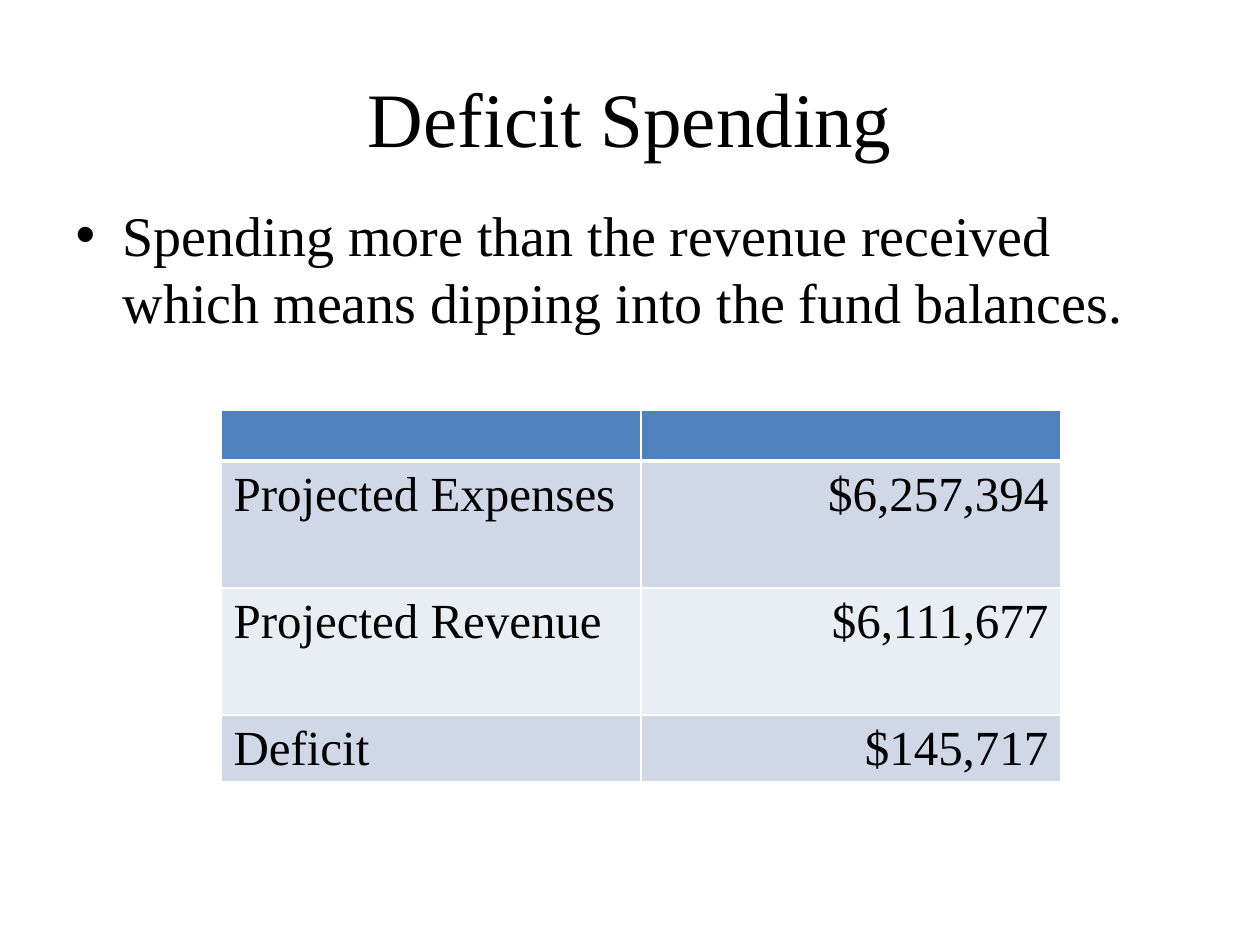
from pptx import Presentation
from pptx.dml.color import RGBColor
from pptx.enum.text import MSO_ANCHOR as ANCHOR, PP_ALIGN as ALIGN
from pptx.oxml.ns import qn
from pptx.util import Emu, Pt
from lxml.etree import SubElement

EMU_PER_PX = 914400 / 126
COLORS = {"text": "000000", "header": "4F81BD", "odd": "D0D8E8",
          "even": "E9EDF4", "border": "FFFFFF"}


def px(n):
    return Emu(round(n * EMU_PER_PX))


class SlideBuilder:
    font = "Times New Roman"

    def __init__(self, prs):
        self.slide = prs.slides.add_slide(prs.slide_layouts[1])

    def add_text(self, p, text, size, align):
        p.alignment = align
        r = p.add_run()
        r.text = text
        r.font.name = self.font
        r.font.size = Pt(size)
        r.font.color.rgb = RGBColor.from_string(COLORS["text"])

    def place(self, sp, x, y, w, h, anchor):
        sp.left, sp.top, sp.width, sp.height = map(px, (x, y, w, h))
        sp.text_frame.word_wrap = True
        sp.text_frame.vertical_anchor = anchor
        return sp.text_frame.paragraphs[0]

    def title(self, text, *box):
        p = self.place(self.slide.shapes.title, *box, ANCHOR.MIDDLE)
        self.add_text(p, text, 44, ALIGN.CENTER)

    def bullet(self, text, *box):
        p = self.place(self.slide.placeholders[1], *box, ANCHOR.TOP)
        self.add_text(p, text, 32, ALIGN.LEFT)
        pPr = p._p.get_or_add_pPr()
        pPr.set("marL", str(px(47)))
        pPr.set("indent", str(-px(47)))
        SubElement(pPr, qn("a:buChar"), char="•")

    def border(self, cell, side, points):
        ln = SubElement(cell._tc.get_or_add_tcPr(), qn(f"a:ln{side}"),
                        w=str(Pt(points)))
        fill = SubElement(ln, qn("a:solidFill"))
        SubElement(fill, qn("a:srgbClr"), val=COLORS["border"])

    def table(self, rows, heights, x, y, col_w):
        cols = len(rows[0])
        table = self.slide.shapes.add_table(
            len(rows), cols, px(x), px(y), px(col_w * cols),
            px(sum(heights))).table
        for col in table.columns:
            col.width = px(col_w)
        for i, (row, height) in enumerate(zip(rows, heights)):
            table.rows[i].height = px(height)
            band = "header" if i == 0 else "odd" if i % 2 else "even"
            for j, text in enumerate(row):
                cell = table.cell(i, j)
                # The rule under the header is heavier
                for side in "LRTB":
                    heavy = (i, side) in ((0, "B"), (1, "T"))
                    self.border(cell, side, 3 if heavy else 1)
                cell.fill.solid()
                cell.fill.fore_color.rgb = RGBColor.from_string(COLORS[band])
                if text:
                    self.add_text(cell.text_frame.paragraphs[0], text, 28,
                                  ALIGN.RIGHT if j else ALIGN.LEFT)


def main():
    prs = Presentation()
    prs.slide_width, prs.slide_height = px(1260), px(945)
    s = SlideBuilder(prs)

    # Title and definition
    s.title("Deficit Spending", 63, 38, 1134, 158)
    s.bullet("Spending more than the revenue received which means dipping "
             "into the fund balances.", 63, 194, 1134, 620)

    # Budget figures under an empty header row
    s.table([("", ""),
             ("Projected Expenses", "$6,257,394"),
             ("Projected Revenue", "$6,111,677"),
             ("Deficit", "$145,717")],
            (51, 127, 127, 66), 221, 410, 420)

    prs.save("out.pptx")


if __name__ == "__main__":
    main()
